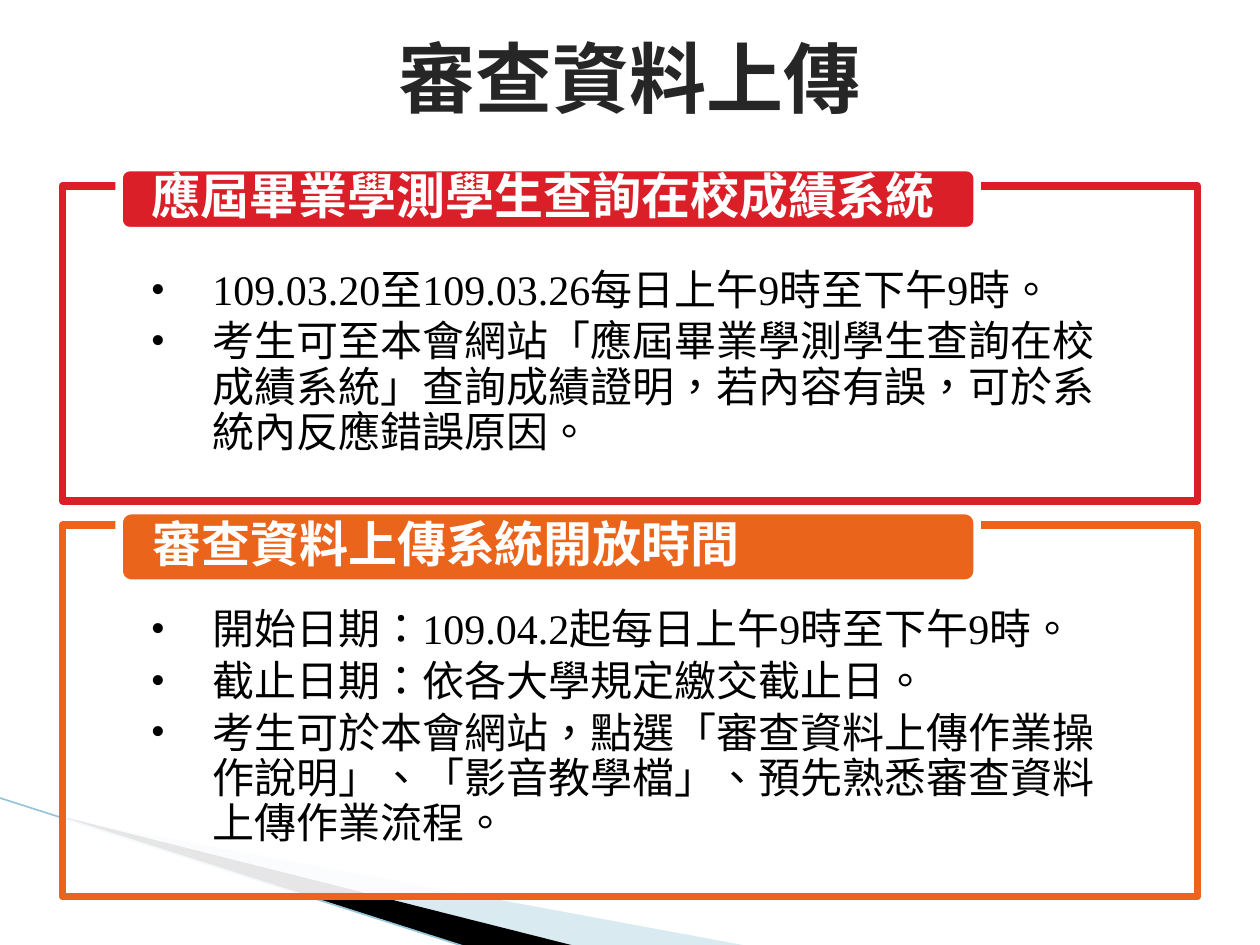
from lxml import etree
from pptx import Presentation
from pptx.dml.color import RGBColor
from pptx.enum import lang, shapes, text
from pptx.oxml import ns
from pptx.util import Pt

CJK_FONT = "Noto Sans CJK SC"
LATIN_FONT = "Times New Roman"


def paint(color_format, hex_color, alpha=None):
    """Set a colour on a fill, line or font; alpha is opacity in percent."""
    if hasattr(color_format, "solid"):
        color_format.solid()
        color_format = color_format.fore_color
    color_format.rgb = RGBColor.from_string(hex_color)
    if alpha is not None:
        rgb = color_format._xFill.find(ns.qn("a:srgbClr"))
        etree.SubElement(rgb, ns.qn("a:alpha"), val=str(alpha * 1000))


def add_span(para, words, size, hex_color, latin_font, bold=False):
    span = para.add_run()
    span.text = words
    span.font.size = Pt(size)
    span.font.name = latin_font
    span.font.bold = bold
    span.font.language_id = lang.MSO_LANGUAGE_ID.TRADITIONAL_CHINESE
    paint(span.font.color, hex_color)
    latin = span.font._element.find(ns.qn("a:latin"))
    latin.addnext(latin.makeelement(ns.qn("a:ea"), typeface=CJK_FONT))


deck = Presentation()
deck.slide_width, deck.slide_height = Pt(720), Pt(540)
page = deck.slides.add_slide(deck.slide_layouts[6])

# Swoosh in the lower left corner
swooshes = [
    ("A0CBDC", 40, [(39.6, 468.7), (428.4, 540.7), (328.3, 540.7), (39.6, 468)]),
    ("000000", 100, [(38.2, 467.3), (329, 540.7), (267.8, 541.4), (38.9, 468)]),
]
for hex_color, alpha, points in swooshes:
    (left, top), *rest = points
    builder = page.shapes.build_freeform(Pt(left), Pt(top))
    builder.add_line_segments([(Pt(x), Pt(y)) for x, y in rest], close=True)
    swoosh = builder.convert_to_shape()
    swoosh.shadow.inherit = False
    paint(swoosh.fill, hex_color, alpha)
    swoosh.line.fill.background()

edge = page.shapes.add_connector(
    shapes.MSO_CONNECTOR.STRAIGHT, Pt(-0.7), Pt(455.8), Pt(267.1), Pt(541.4))
paint(edge.line.fill, "97C5D8")
edge.line.width = Pt(0.95)
etree.SubElement(edge._element.spPr, ns.qn("a:effectLst"))

# Title
title = page.shapes.add_textbox(Pt(32.4), Pt(18.2), Pt(654.5), Pt(51.1))
title.text_frame.word_wrap = True
title.text_frame.vertical_anchor = text.MSO_ANCHOR.MIDDLE
para = title.text_frame.paragraphs[0]
para.alignment = text.PP_ALIGN.CENTER
add_span(para, "審查資料上傳", 44, "262626", CJK_FONT, bold=True)

# Framed sections: colour, frame top and height, header top and height, texts
sections = [
    ("DA1F28", 106.2, 180, 95.8, 36, "應屆畢業學測學生查詢在校成績系統", [
        "109.03.20至109.03.26每日上午9時至下午9時。",
        "考生可至本會網站「應屆畢業學測學生查詢在校成績系統」查詢成績證明，"
        "若內容有誤，可於系統內反應錯誤原因。",
    ]),
    ("EB641B", 300.2, 212.2, 291.8, 41.5, "審查資料上傳系統開放時間", [
        "開始日期：109.04.2起每日上午9時至下午9時。",
        "截止日期：依各大學規定繳交截止日。",
        "考生可於本會網站，點選「審查資料上傳作業操作說明」、「影音教學檔」、"
        "預先熟悉審查資料上傳作業流程。",
    ]),
]
for accent, frame_top, frame_height, header_top, header_height, heading, items in sections:
    frame = page.shapes.add_shape(
        shapes.MSO_SHAPE.RECTANGLE, Pt(35.7), Pt(frame_top), Pt(648.6), Pt(frame_height))
    header = page.shapes.add_shape(
        shapes.MSO_SHAPE.ROUNDED_RECTANGLE,
        Pt(68.1), Pt(header_top), Pt(490.3), Pt(header_height))
    paint(frame.fill, "FFFFFF", 90)
    paint(frame.line.fill, accent)
    paint(header.fill, accent)
    paint(header.line.fill, "FFFFFF")

    for box, side, top, bottom in [(frame, 50.4, 47.5, 13.7), (header, 17, 0, 0)]:
        box.shadow.inherit = False
        box.line.width = Pt(4.33)
        body = box.text_frame
        body.word_wrap = True
        body.margin_left = body.margin_right = Pt(side)
        body.margin_top, body.margin_bottom = Pt(top), Pt(bottom)
    frame.text_frame.vertical_anchor = text.MSO_ANCHOR.TOP
    header.text_frame.vertical_anchor = text.MSO_ANCHOR.MIDDLE

    para = header.text_frame.paragraphs[0]
    para.alignment = text.PP_ALIGN.LEFT
    para.line_spacing = 0.9
    add_span(para, heading, 28, "FFFFFF", LATIN_FONT, bold=True)

    for index, item in enumerate(items):
        body = frame.text_frame
        para = body.add_paragraph() if index else body.paragraphs[0]
        para.alignment = text.PP_ALIGN.LEFT
        para.level = 1
        para.line_spacing = 0.9
        para.space_after = Pt(3.6)
        layout = para._p.get_or_add_pPr()
        layout.set("marL", str(Pt(35.3)))
        layout.set("indent", str(-Pt(35.3)))
        layout.set("hangingPunct", "0")
        etree.SubElement(layout, ns.qn("a:buFont"), typeface=LATIN_FONT)
        etree.SubElement(layout, ns.qn("a:buChar"), char="•")
        add_span(para, item, 24, "000000", LATIN_FONT)

deck.save("out.pptx")
